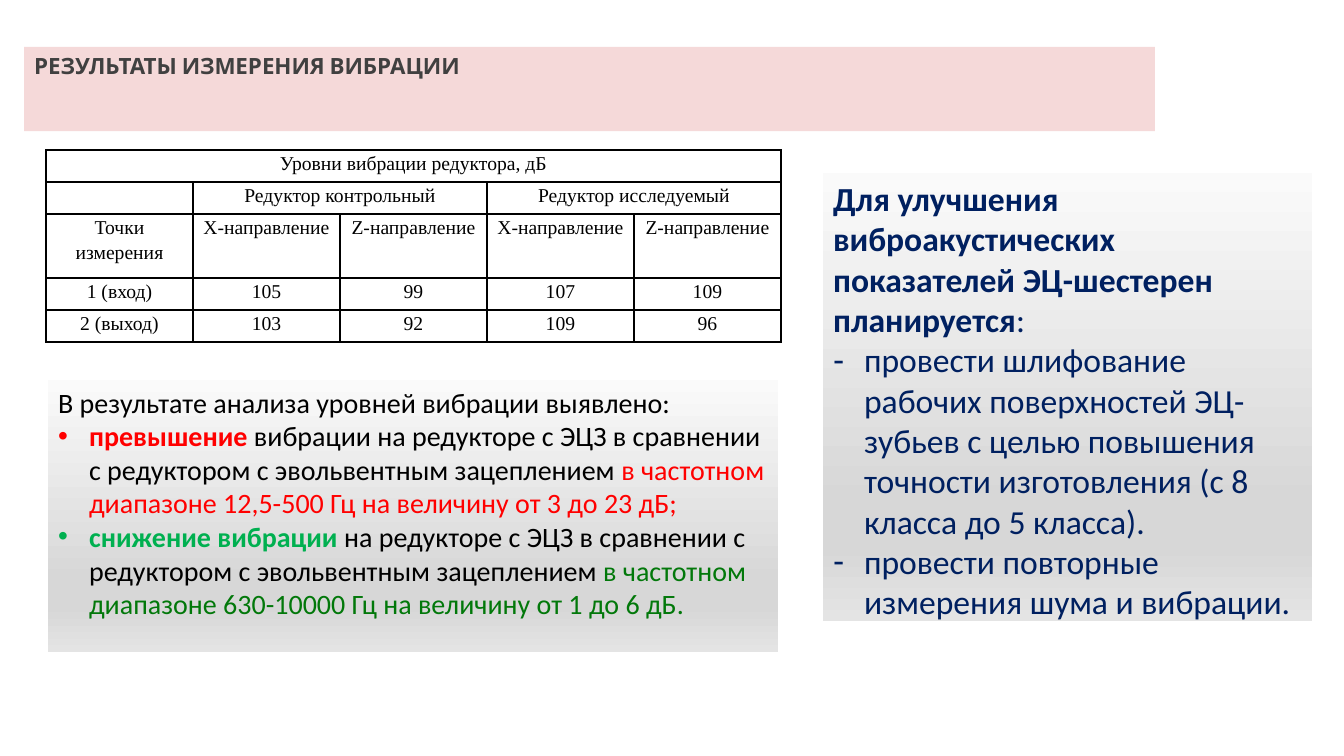
import pptx
import pptx.util
import pptx.oxml
import pptx.oxml.ns
import pptx.dml.color
import pptx.enum.text
import lxml.etree

RGBColor = pptx.dml.color.RGBColor
BLACK = RGBColor(0x00, 0x00, 0x00)
GREY = RGBColor(0x40, 0x40, 0x40)
DARK_RED = RGBColor(0xC0, 0x00, 0x00)
RED = RGBColor(0xFF, 0x00, 0x00)
LIGHT_GREEN = RGBColor(0x00, 0xB0, 0x50)
DARK_GREEN = RGBColor(0x02, 0x78, 0x0A)
NAVY = RGBColor(0x00, 0x20, 0x60)

PX = 12192000 / 1344
QN = pptx.oxml.ns.qn
NAMESPACE = pptx.oxml.ns.nsdecls("a")
PANEL_STOPS = [(0, "FAFAFA"), (74, "D7D7D7"), (83, "D7D7D7"), (100, "E4E4E4")]


def px(length):
    return pptx.util.Emu(round(length * PX))


def place(shape, left, top, width, height):
    shape.left, shape.top = px(left), px(top)
    shape.width, shape.height = px(width), px(height)


deck = pptx.Presentation()
deck.slide_width, deck.slide_height = px(1344), px(756)
page = deck.slides.add_slide(deck.slide_layouts.get_by_name("Two Content"))

# Title band
title = page.shapes.title
place(title, 24, 47, 1131, 37)
title.fill.solid()
title.fill.fore_color.rgb = DARK_RED
band_color = title.fill._xPr.find(".//" + QN("a:srgbClr"))
lxml.etree.SubElement(band_color, QN("a:alpha"), val="15000")
title.text_frame.text = "РЕЗУЛЬТАТЫ ИЗМЕРЕНИЯ ВИБРАЦИИ"
title.text_frame.vertical_anchor = pptx.enum.text.MSO_ANCHOR.TOP
title.text_frame.auto_size = pptx.enum.text.MSO_AUTO_SIZE.SHAPE_TO_FIT_TEXT
heading = title.text_frame.paragraphs[0]
heading.alignment = pptx.enum.text.PP_ALIGN.LEFT
heading_font = heading.runs[0].font
heading_font.name, heading_font.size = "Cabin", pptx.util.Pt(16)
heading_font.bold, heading_font.color.rgb = True, GREY

# Vibration levels
levels = [
    ["Уровни вибрации редуктора, дБ", "", "", "", ""],
    ["", "Редуктор контрольный", "", "Редуктор исследуемый", ""],
    ["Точки измерения"] + ["X-направление", "Z-направление"] * 2,
    ["1 (вход)", "105", "99", "107", "109"],
    ["2 (выход)", "103", "92", "109", "96"],
]
table = page.shapes.add_table(5, 5, px(46), px(150), px(735), px(192)).table
table.first_row = table.horz_banding = False
for column in table.columns:
    column.width = px(147)
for row, height in zip(table.rows, [32, 32, 64, 32, 32]):
    row.height = px(height)
for row_index, texts in enumerate(levels):
    for column_index, text in enumerate(texts):
        cell = table.cell(row_index, column_index)
        cell.margin_left = cell.margin_right = px(7)
        cell.margin_top = cell.margin_bottom = 0
        for side in ("lnL", "lnR", "lnT", "lnB"):
            cell._tc.get_or_add_tcPr().append(pptx.oxml.parse_xml(
                f'<a:{side} {NAMESPACE} w="12700"><a:solidFill>'
                f'<a:srgbClr val="{BLACK}"/></a:solidFill></a:{side}>'))
        cell.fill.background()
        if text:
            cell.text_frame.text = text
            para = cell.text_frame.paragraphs[0]
            para.alignment = pptx.enum.text.PP_ALIGN.CENTER
            para.line_spacing = 1.15
            font = para.runs[0].font
            font.name, font.size = "Times New Roman", pptx.util.Pt(14)
            font.color.rgb = BLACK
for row_index, first, last in [(0, 0, 4), (1, 1, 2), (1, 3, 4)]:
    table.cell(row_index, first).merge(table.cell(row_index, last))

# Findings and plans: each paragraph is a list of (text, color, bold)
findings = [
    [("В результате анализа уровней вибрации выявлено:", BLACK, False)],
    [("превышение", RED, True),
     (" вибрации на редукторе с ЭЦЗ в сравнении с редуктором "
      "с эвольвентным зацеплением ", BLACK, False),
     ("в частотном диапазоне 12,5-500 Гц на величину от 3 до 23 дБ;", RED, False)],
    [("снижение вибрации ", LIGHT_GREEN, True),
     ("на редукторе с ЭЦЗ в сравнении с редуктором "
      "с эвольвентным зацеплением ", BLACK, False),
     ("в частотном диапазоне 630-10000 Гц на величину от 1 до 6 дБ.",
      DARK_GREEN, False)],
]
plans = [
    [("Для улучшения виброакустических показателей ЭЦ-шестерен планируется",
      NAVY, True), (":", NAVY, False)],
    [("провести шлифование рабочих поверхностей ЭЦ-зубьев с целью повышения "
      "точности изготовления (с 8 класса до 5 класса).", NAVY, False)],
    [("провести повторные измерения шума и вибрации.", NAVY, False)],
]
panels = [
    (1, (48, 380, 730, 282), 20, "•", findings),
    (2, (823, 173, 489, 458), 24, "-", plans),
]
for placeholder_index, bounds, size, bullet, paragraphs in panels:
    box = page.placeholders[placeholder_index]
    place(box, *bounds)
    stops = "".join(
        f'<a:gs pos="{position * 1000}"><a:srgbClr val="{color}"/></a:gs>'
        for position, color in PANEL_STOPS)
    box._element.spPr.append(pptx.oxml.parse_xml(
        f'<a:gradFill {NAMESPACE} rotWithShape="1"><a:gsLst>{stops}</a:gsLst>'
        '<a:lin ang="5400000" scaled="0"/></a:gradFill>'))
    frame = box.text_frame
    frame.auto_size = pptx.enum.text.MSO_AUTO_SIZE.SHAPE_TO_FIT_TEXT
    for index, spans in enumerate(paragraphs):
        para = frame.add_paragraph() if index else frame.paragraphs[0]
        para.space_before = pptx.util.Pt(0)
        properties = para._p.get_or_add_pPr()
        indent = px(31) if index else 0
        properties.set("marL", str(indent))
        properties.set("indent", str(-indent))
        if index:
            lxml.etree.SubElement(properties, QN("a:buChar"), char=bullet)
        else:
            lxml.etree.SubElement(properties, QN("a:buNone"))
        for text, color, bold in spans:
            span = para.add_run()
            span.text = text
            span.font.name, span.font.size = "Calibri", pptx.util.Pt(size)
            span.font.bold, span.font.color.rgb = bold, color

deck.save("out.pptx")
